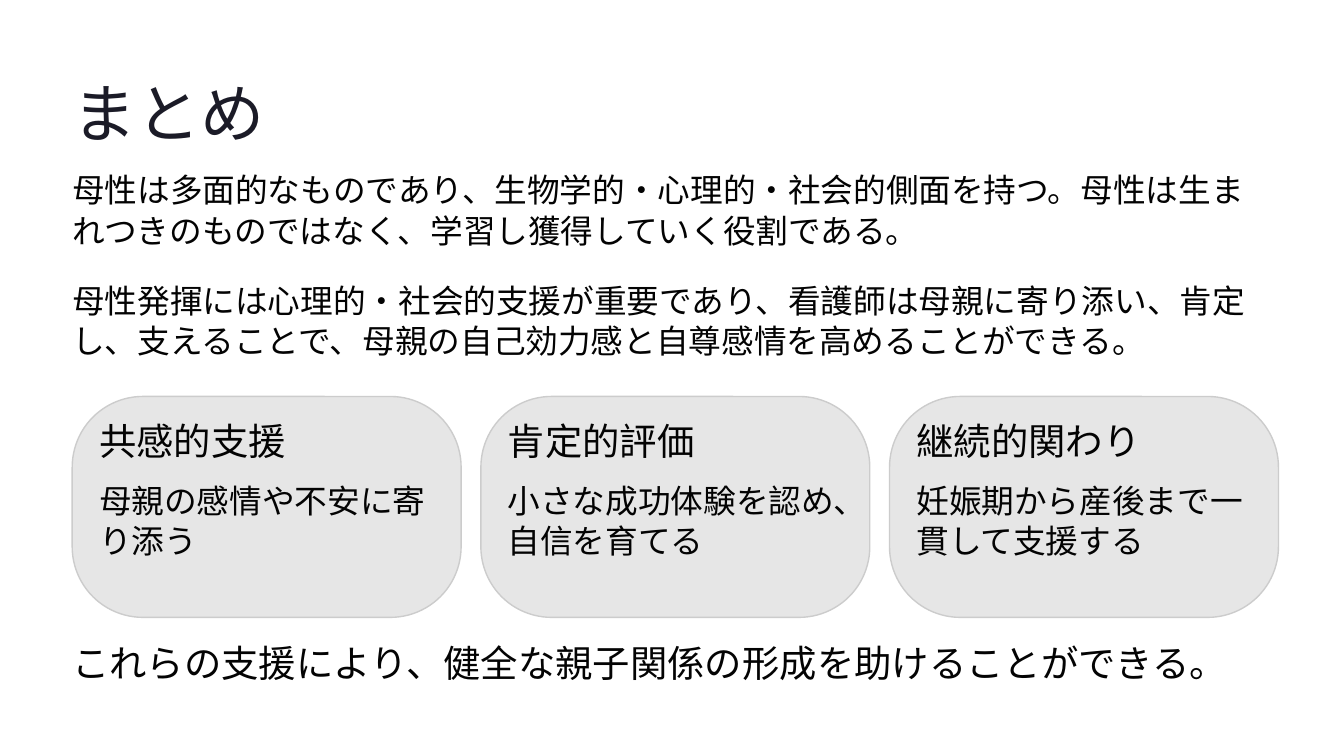
from pptx import Presentation
from pptx import util as u
from pptx.dml.color import RGBColor
from pptx.enum import shapes, text
from pptx.oxml.ns import qn
from lxml import etree

TITLE = "まとめ"
POINTS = [
    "母性は多面的なものであり、生物学的・心理的・社会的側面を持つ。母性は生まれつきのものではなく、学習し獲得していく役割である。",
    "母性発揮には心理的・社会的支援が重要であり、看護師は母親に寄り添い、肯定し、支えることで、母親の自己効力感と自尊感情を高めることができる。",
]
CARDS = [
    ("共感的支援", "母親の感情や不安に寄り添う"),
    ("肯定的評価", "小さな成功体験を認め、自信を育てる"),
    ("継続的関わり", "妊娠期から産後まで一貫して支援する"),
]
CONCLUSION = "これらの支援により、健全な親子関係の形成を助けることができる。"

COLORS = {"title": "1B1B27", "text": "030303", "card": "E6E6E6", "border": "CCCCCC"}
HEADING, BODY = "Inter", "Karla"
WIDTH, HEIGHT = 16, 9
MARGIN = 0.86
CONTENT_W = 14.29
CARD_TOP, CARD_W, CARD_H = 4.72, 4.63, 2.63
CARD_GAP, CARD_PAD = 0.235, 0.32


def color(name):
    return RGBColor.from_string(COLORS[name])


def place(s, left, top, width, height):
    s.left, s.top, s.width, s.height = map(u.Inches, (left, top, width, height))


def write(s, *paragraphs, font=BODY, size=28, leading=35, gap=0, ink="text", wrap=True):
    """Fill a text shape, top left, without insets; gap parts the paragraphs."""
    tf = s.text_frame
    tf.auto_size = text.MSO_AUTO_SIZE.NONE
    tf.word_wrap = wrap
    tf.vertical_anchor = text.MSO_ANCHOR.TOP
    tf.margin_left = tf.margin_top = tf.margin_right = tf.margin_bottom = 0
    for i, line in enumerate(paragraphs):
        p = tf.add_paragraph() if i else tf.paragraphs[0]
        p.alignment = text.PP_ALIGN.LEFT
        p.line_spacing = u.Pt(leading)
        p.space_before = u.Pt(gap if i else 0)
        r = p.add_run()
        r.text = line
        r.font.name, r.font.size = font, u.Pt(size)
        r.font.color.rgb = color(ink)


def remove_bullets(s):
    for p in s.text_frame.paragraphs:
        pPr = p._p.get_or_add_pPr()
        pPr.set("marL", "0")
        pPr.set("indent", "0")
        etree.SubElement(pPr, qn("a:buNone"))


def add_text(slide, box, line, **style):
    s = slide.shapes.add_textbox(*map(u.Inches, box))
    write(s, line, **style)


def add_card(slide, left, heading, detail):
    s = slide.shapes.add_shape(
        shapes.MSO_SHAPE.ROUNDED_RECTANGLE,
        *map(u.Inches, (left, CARD_TOP, CARD_W, CARD_H)))
    s.adjustments[0] = 0.32
    s.shadow.inherit = False
    s.fill.solid()
    s.fill.fore_color.rgb = color("card")
    s.line.color.rgb = color("border")
    s.line.width = u.Pt(1.2)
    x, y = left + CARD_PAD, CARD_TOP + CARD_PAD
    add_text(slide, (x, y, 3.88, 0.55), heading,
             font=HEADING, size=32, leading=34, wrap=False)
    add_text(slide, (x, y + 0.66, 3.98, 1.13), detail)


def main():
    prs = Presentation()
    prs.slide_width, prs.slide_height = u.Inches(WIDTH), u.Inches(HEIGHT)
    slide = prs.slides.add_slide(prs.slide_layouts[1])
    title, body = slide.placeholders

    place(title, MARGIN, 0.84, 7.64, 0.95)
    write(title, TITLE, font=HEADING, size=55, leading=68.5, ink="title", wrap=False)

    place(body, MARGIN, 2, CONTENT_W, 2.3)
    write(body, *POINTS, gap=25)
    remove_bullets(body)

    for i, card in enumerate(CARDS):
        add_card(slide, MARGIN + i * (CARD_W + CARD_GAP), *card)

    add_text(slide, (MARGIN, 7.67, CONTENT_W, 0.49), CONCLUSION, size=32, wrap=False)
    prs.save("out.pptx")


if __name__ == "__main__":
    main()
